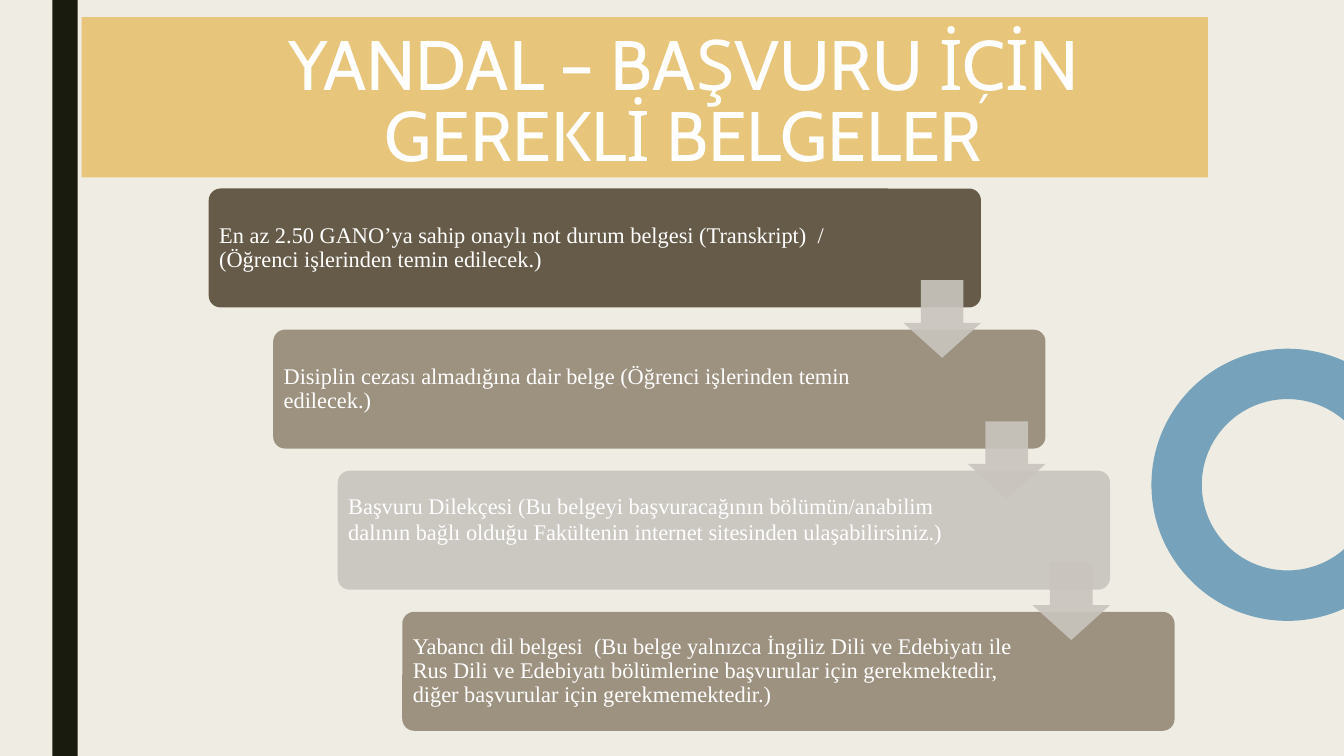
from dataclasses import dataclass
from math import acos, cos, pi, sin, tan

from lxml import etree
from pptx import Presentation
from pptx.dml.color import RGBColor
from pptx.enum.shapes import MSO_SHAPE
from pptx.enum.text import MSO_ANCHOR, MSO_AUTO_SIZE, PP_ALIGN
from pptx.oxml.ns import qn
from pptx.util import Inches, Pt

RECT, CARD, ARROW = MSO_SHAPE.RECTANGLE, MSO_SHAPE.ROUNDED_RECTANGLE, MSO_SHAPE.DOWN_ARROW
MIDDLE, NO_FIT = MSO_ANCHOR.MIDDLE, MSO_AUTO_SIZE.NONE
LEFT, CENTER = PP_ALIGN.LEFT, PP_ALIGN.CENTER

SLIDE_W, SLIDE_H = 13.33, 7.5
WHITE = "FFFFFF"

# Staircase grid: each card moves one column right and one row down
START_X, START_Y = 2.07, 1.87
COLUMN, ROW = 0.64, 1.4
CARD_W, CARD_H = 7.66, 1.18
ARROW_SIZE, ARROW_DROP = 0.77, 0.91


@dataclass
class Step:
    text: str
    color: str
    spacing: float = 0.9
    bottom: float = 0.07


STEPS = [
    Step("En az 2.50 GANO’ya sahip onaylı not durum belgesi (Transkript)  / "
         "(Öğrenci işlerinden temin edilecek.)", "655B48"),
    Step("Disiplin cezası almadığına dair belge (Öğrenci işlerinden temin edilecek.)",
         "9D9280"),
    Step("Başvuru Dilekçesi (Bu belgeyi başvuracağının bölümün/anabilim dalının bağlı "
         "olduğu Fakültenin internet sitesinden ulaşabilirsiniz.)", "CBC7C1", 1.0, 0.3),
    Step("Yabancı dil belgesi  (Bu belge yalnızca İngiliz Dili ve Edebiyatı ile Rus Dili "
         "ve Edebiyatı bölümlerine başvurular için gerekmektedir, diğer başvurular için "
         "gerekmemektedir.)", "9D9280"),
]


def paint(sp, color: str, opacity: int = 100) -> None:
    sp.fill.solid()
    sp.fill.fore_color.rgb = RGBColor.from_string(color)
    sp.line.fill.background()
    if opacity < 100:
        clr = sp.fill._xPr.find(qn("a:solidFill"))[0]
        etree.SubElement(clr, qn("a:alpha")).set("val", str(opacity * 1000))


def add_box(s, kind, x: float, y: float, w: float, h: float, color: str,
            opacity: int = 100, adjust: tuple = ()):
    sp = s.shapes.add_shape(kind, Inches(x), Inches(y), Inches(w), Inches(h))
    sp.shadow.inherit = False
    paint(sp, color, opacity)
    for i, value in enumerate(adjust):
        sp.adjustments[i] = value
    return sp


def write(sp, text: str, font: str, size: float, align, spacing: float,
          insets: tuple) -> None:
    tf = sp.text_frame
    tf.word_wrap, tf.auto_size, tf.vertical_anchor = True, NO_FIT, MIDDLE
    tf.margin_left, tf.margin_top, tf.margin_right, tf.margin_bottom = map(Inches, insets)
    tf.text = text
    p = tf.paragraphs[0]
    p.alignment, p.line_spacing = align, spacing
    p.font.name, p.font.size = font, Pt(size)
    p.font.color.rgb = RGBColor.from_string(WHITE)


def add_ring(s, cx: float, cy: float, outer: float, inner: float, color: str) -> None:
    """Ring cut off by the right edge of the slide, with curved sides."""
    def on_circle(radius: float, angle: float) -> tuple:
        return Inches(cx + radius * cos(angle)), Inches(cy + radius * sin(angle))

    def stops(radius: float) -> list:
        cut = acos((SLIDE_W - cx) / radius)
        return [(radius, a) for a in (cut, pi / 2, pi, 3 * pi / 2, 2 * pi - cut)]

    route = stops(outer) + stops(inner)[::-1]
    points = [on_circle(*stop) for stop in route]
    builder = s.shapes.build_freeform(*points[0], scale=1.0)
    builder.add_line_segments(points[1:], close=True)
    sp = builder.convert_to_shape()
    sp.shadow.inherit = False
    paint(sp, color)

    # Bend every straight side that stays on one circle
    sides = list(sp._element.iter(qn("a:lnTo")))
    for side, (r0, a0), (r1, a1) in zip(sides, route, route[1:]):
        if r0 != r1:
            continue
        pull = 4 / 3 * tan((a1 - a0) / 4)
        (x0, y0), (x1, y1) = on_circle(r0, a0), on_circle(r1, a1)
        reach = Inches(r0) * pull
        handles = [(x0 - reach * sin(a0), y0 + reach * cos(a0)),
                   (x1 + reach * sin(a1), y1 - reach * cos(a1))]
        side.tag = qn("a:cubicBezTo")
        for i, (x, y) in enumerate(handles):
            pt = etree.Element(qn("a:pt"), x=str(round(x - sp.left)), y=str(round(y - sp.top)))
            side.insert(i, pt)


def main() -> None:
    prs = Presentation()
    prs.slide_width, prs.slide_height = Inches(SLIDE_W), Inches(SLIDE_H)
    s = prs.slides.add_slide(prs.slide_layouts[5])
    s.background.fill.solid()
    s.background.fill.fore_color.rgb = RGBColor.from_string("EFEDE3")

    # Side bar and title band
    add_box(s, RECT, 0.52, 0, 0.25, SLIDE_H, "191B0E")
    title = s.shapes.title
    title.left, title.top, title.width, title.height = map(Inches, (0.81, 0.17, 11.17, 1.59))
    paint(title, "E6C069", 85)
    write(title, "YANDAL – BAŞVURU İÇİN GEREKLİ BELGELER", "Cabin", 50, CENTER, 0.85,
          (0.87, 0.15, 0.1, 0))

    add_ring(s, 12.77, 4.81, 1.35, 0.85, "77A2BB")

    # Cards of the staircase
    for i, step in enumerate(STEPS):
        card = add_box(s, CARD, START_X + i * COLUMN, START_Y + i * ROW, CARD_W, CARD_H,
                       step.color, adjust=(0.1,))
        write(card, step.text, "Times New Roman", 16, LEFT, step.spacing,
              (0.07, 0.07, 1.36, step.bottom))

    # Arrows leading to the next card
    for i in range(len(STEPS) - 1):
        add_box(s, ARROW, START_X + i * COLUMN + CARD_W - ARROW_SIZE,
                START_Y + i * ROW + ARROW_DROP, ARROW_SIZE, ARROW_SIZE,
                "C9C5BE", 90, (0.55, 0.45))

    prs.save("out.pptx")


if __name__ == "__main__":
    main()
